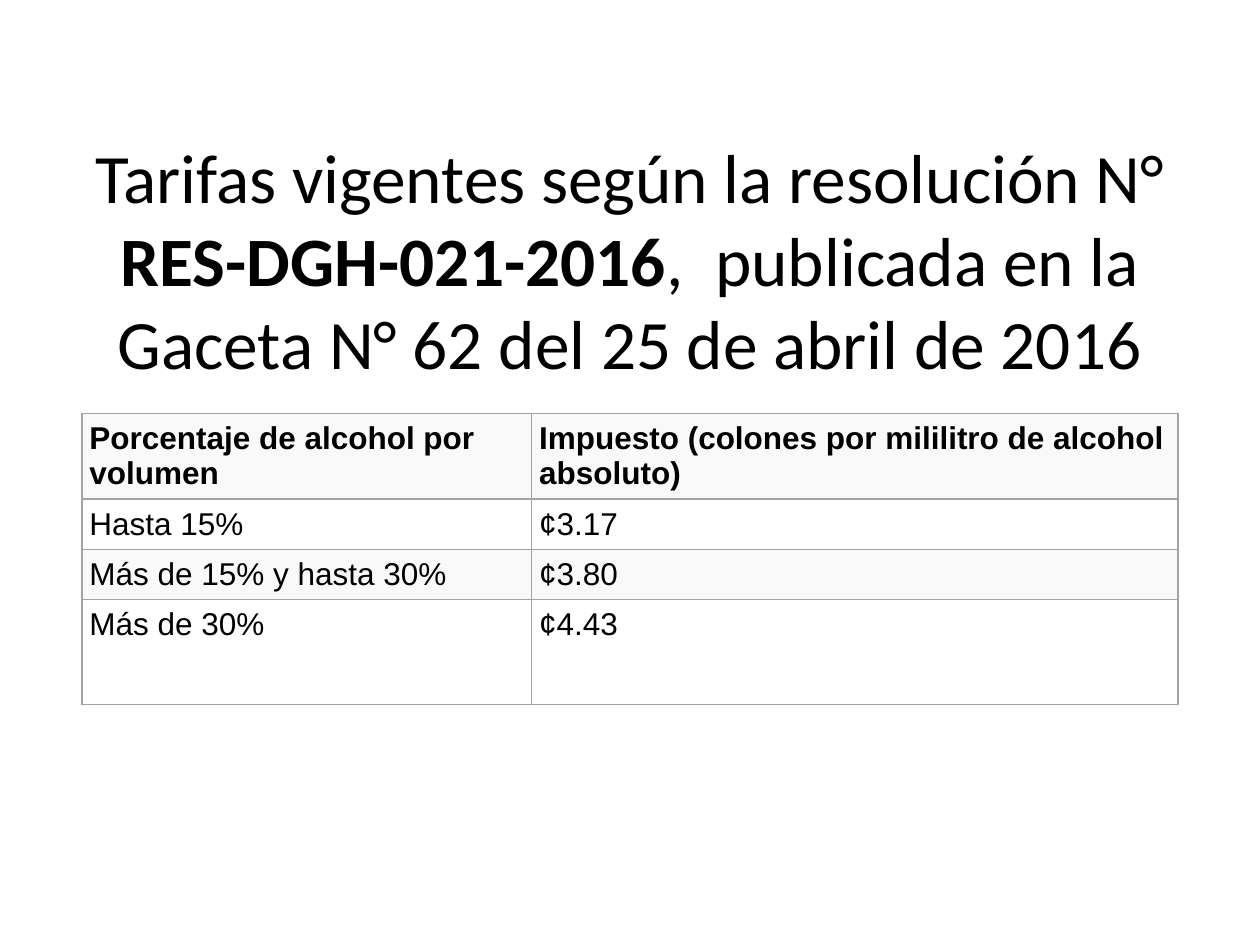
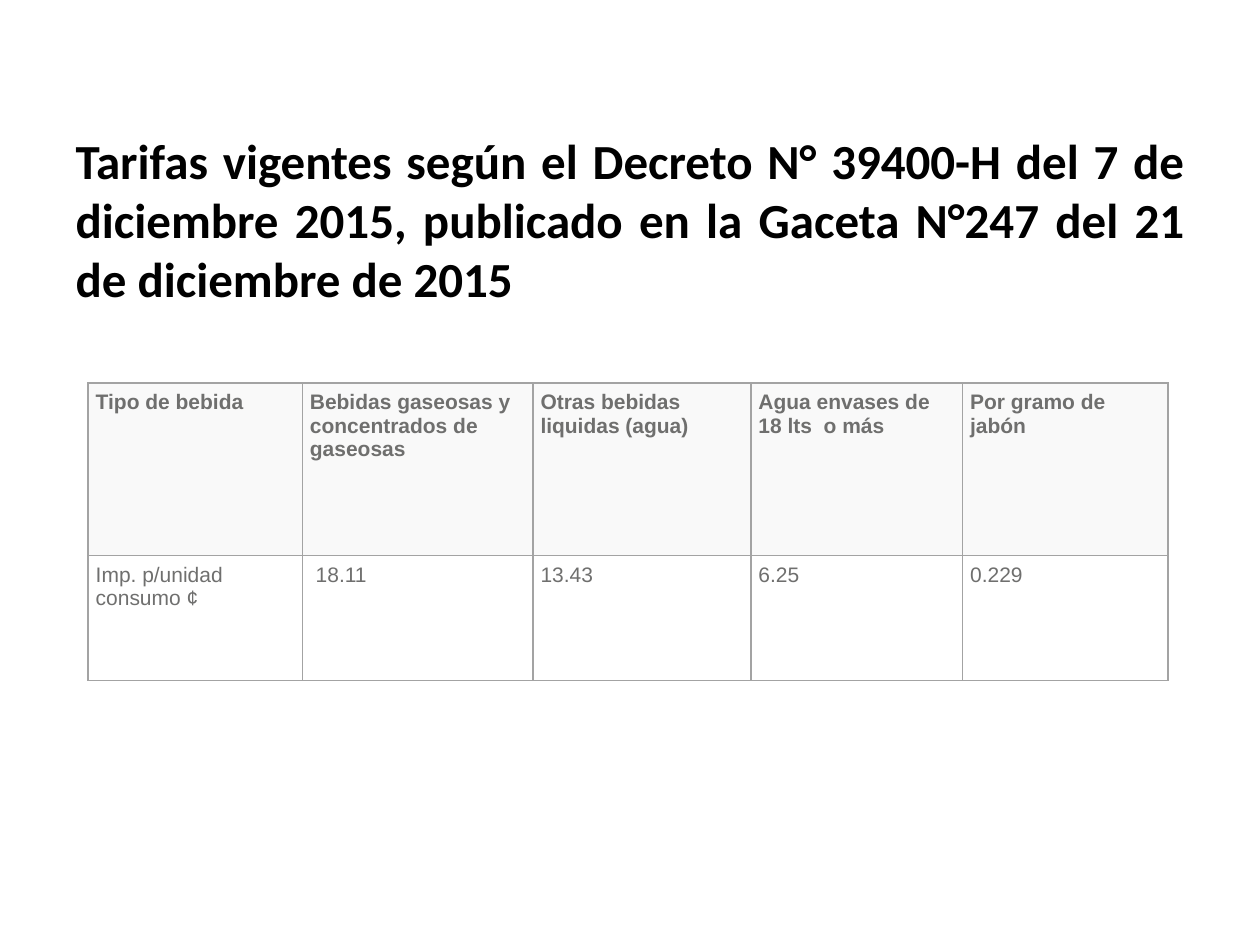
from dataclasses import dataclass

from lxml.etree import SubElement
from pptx import Presentation
from pptx.dml.color import RGBColor
from pptx.enum.text import MSO_ANCHOR, MSO_AUTO_SIZE, PP_ALIGN
from pptx.oxml.ns import qn
from pptx.slide import Slide
from pptx.util import Emu, Inches, Pt


@dataclass(frozen=True)
class Theme:
    ink: str = "000000"
    gray: str = "6F6F6E"
    rule: str = "A3A3A3"
    band: str = "F9F9F9"
    plain: str = "FFFFFF"
    head: str = "Calibri"
    body: str = "Arial"
    large: float = 39.6
    mid: float = 28
    cell: float = 18
    small: float = 12
    line: float = 1
    pad: float = 0.06


@dataclass(frozen=True)
class Box:
    """Left, top, width and height in percent of the slide."""
    left: float
    top: float
    width: float
    height: float


@dataclass(frozen=True)
class Title:
    box: Box
    runs: list[tuple[str, bool]]
    size: float
    align: PP_ALIGN


@dataclass(frozen=True)
class Grid:
    """Columns and rows hold relative sizes."""
    box: Box
    cols: list[float]
    rows: list[float]
    cells: list[list[str]]
    size: float
    color: str


THEME = Theme()
WIDE, HIGH = Inches(10), Inches(7.5)

PAGES = [
    (
        Title(
            Box(5, 14.27, 90, 26.27),
            [("Tarifas vigentes según la resolución N° ", False),
             ("RES-DGH-021-2016", True),
             (",  publicada en la Gaceta N° 62 del 25 de abril de 2016", False)],
            THEME.large, PP_ALIGN.CENTER),
        Grid(
            Box(6.5, 43.73, 87, 30.4),
            [357, 513], [67, 39, 39, 83],
            [["Porcentaje de alcohol por volumen",
              "Impuesto (colones por mililitro de alcohol absoluto)"],
             ["Hasta 15%", "¢3.17"],
             ["Más de 15% y hasta 30%", "¢3.80"],
             ["Más de 30%", "¢4.43"]],
            THEME.cell, THEME.ink),
    ),
    (
        Title(
            Box(5, 15.33, 90, 15.73),
            [("Tarifas vigentes según el Decreto N° 39400-H del 7 de diciembre "
              "2015, publicado en la Gaceta N°247 del 21 de diciembre de 2015",
              True)],
            THEME.mid, PP_ALIGN.JUSTIFY),
        Grid(
            Box(7, 40.53, 85.7, 31.47),
            [170, 183, 173, 168, 163], [137, 99],
            [["Tipo de bebida", "Bebidas gaseosas y concentrados de gaseosas",
              "Otras bebidas liquidas (agua)", "Agua envases de 18 lts  o más",
              "Por gramo de jabón"],
             ["Imp. p/unidad  consumo ¢", " 18.11", "13.43", "6.25", "0.229"]],
            THEME.small, THEME.gray),
    ),
]


def apply(item, style: dict) -> None:
    for name, value in style.items():
        setattr(item, name, value)


def place(box: Box) -> dict:
    return {
        "left": Emu(round(WIDE * box.left / 100)),
        "top": Emu(round(HIGH * box.top / 100)),
        "width": Emu(round(WIDE * box.width / 100)),
        "height": Emu(round(HIGH * box.height / 100)),
    }


def add_run(para, text: str, face: str, size: float, color: str, bold: bool) -> None:
    run = para.add_run()
    run.text = text
    apply(run.font, {"name": face, "size": Pt(size), "bold": bold})
    run.font.color.rgb = RGBColor.from_string(color)


def add_title(slide: Slide, title: Title) -> None:
    shape = slide.shapes.title
    apply(shape, place(title.box))
    frame = shape.text_frame
    apply(frame, {"auto_size": MSO_AUTO_SIZE.NONE, "word_wrap": True,
                  "vertical_anchor": MSO_ANCHOR.MIDDLE})
    para = frame.paragraphs[0]
    para.alignment = title.align
    for text, bold in title.runs:
        add_run(para, text, THEME.head, title.size, THEME.ink, bold)


def add_edges(cell) -> None:
    props = cell._tc.get_or_add_tcPr()
    for side in ("lnL", "lnR", "lnT", "lnB"):
        edge = SubElement(props, qn(f"a:{side}"), w=str(Pt(THEME.line)))
        fill = SubElement(edge, qn("a:solidFill"))
        SubElement(fill, qn("a:srgbClr"), val=THEME.rule)


def add_grid(slide: Slide, grid: Grid) -> None:
    area = place(grid.box)
    table = slide.shapes.add_table(len(grid.rows), len(grid.cols), **area).table
    apply(table, {"first_row": False, "horz_banding": False})

    # Column and row sizes
    for col, part in zip(table.columns, grid.cols):
        col.width = Emu(round(area["width"] * part / sum(grid.cols)))
    for row, part in zip(table.rows, grid.rows):
        row.height = Emu(round(area["height"] * part / sum(grid.rows)))

    # Cells: bold header, every other row tinted
    pads = ("margin_left", "margin_right", "margin_top", "margin_bottom")
    for r, line in enumerate(grid.cells):
        for c, text in enumerate(line):
            cell = table.cell(r, c)
            apply(cell, dict.fromkeys(pads, Inches(THEME.pad)))
            add_edges(cell)
            cell.fill.solid()
            tint = THEME.plain if r % 2 else THEME.band
            cell.fill.fore_color.rgb = RGBColor.from_string(tint)
            add_run(cell.text_frame.paragraphs[0], text, THEME.body,
                    grid.size, grid.color, r == 0)


def main() -> None:
    deck = Presentation()
    apply(deck, {"slide_width": WIDE, "slide_height": HIGH})
    layout = deck.slide_layouts.get_by_name("Title Only")
    for title, grid in PAGES:
        slide = deck.slides.add_slide(layout)
        add_title(slide, title)
        add_grid(slide, grid)
    deck.save("out.pptx")


if __name__ == "__main__":
    main()
